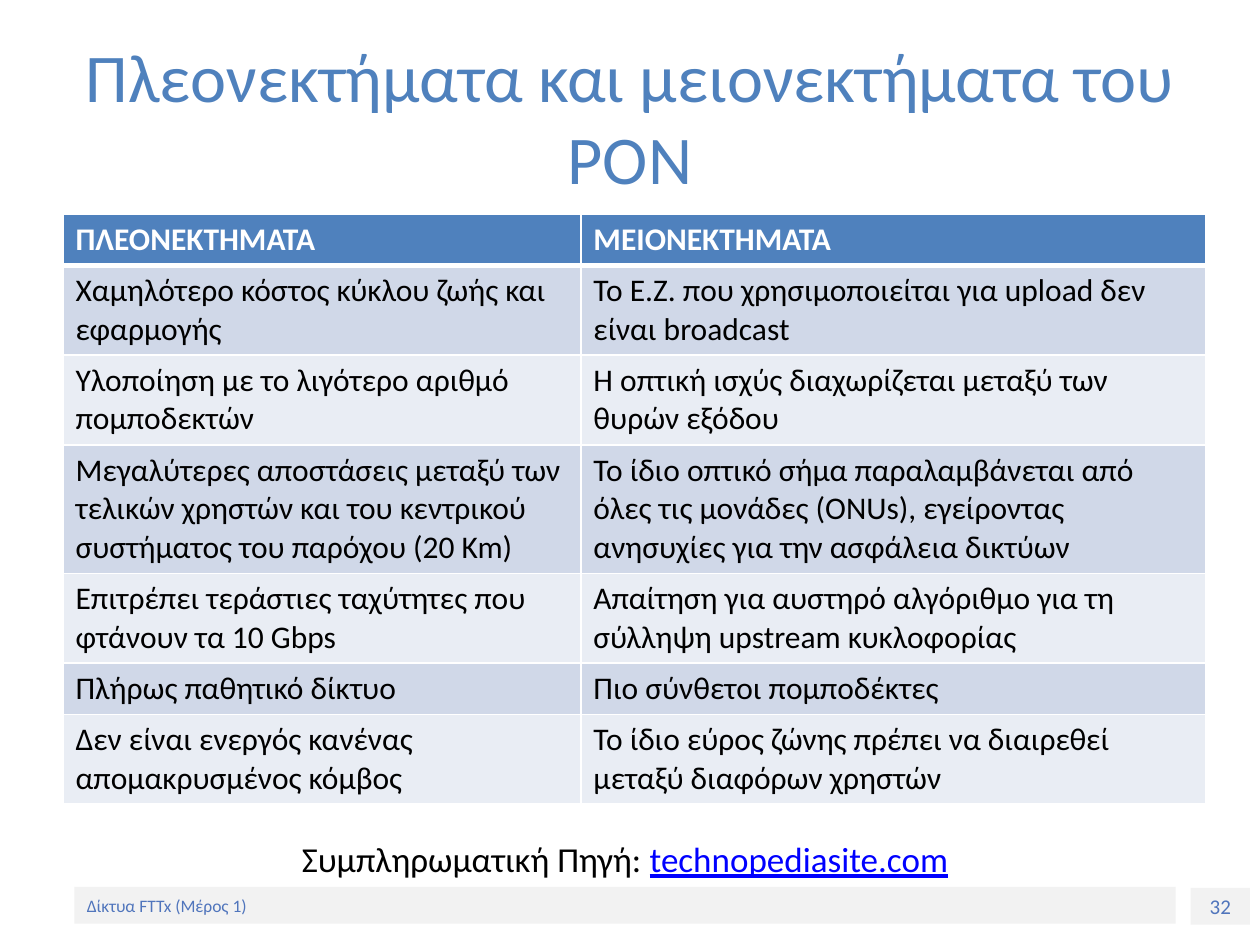
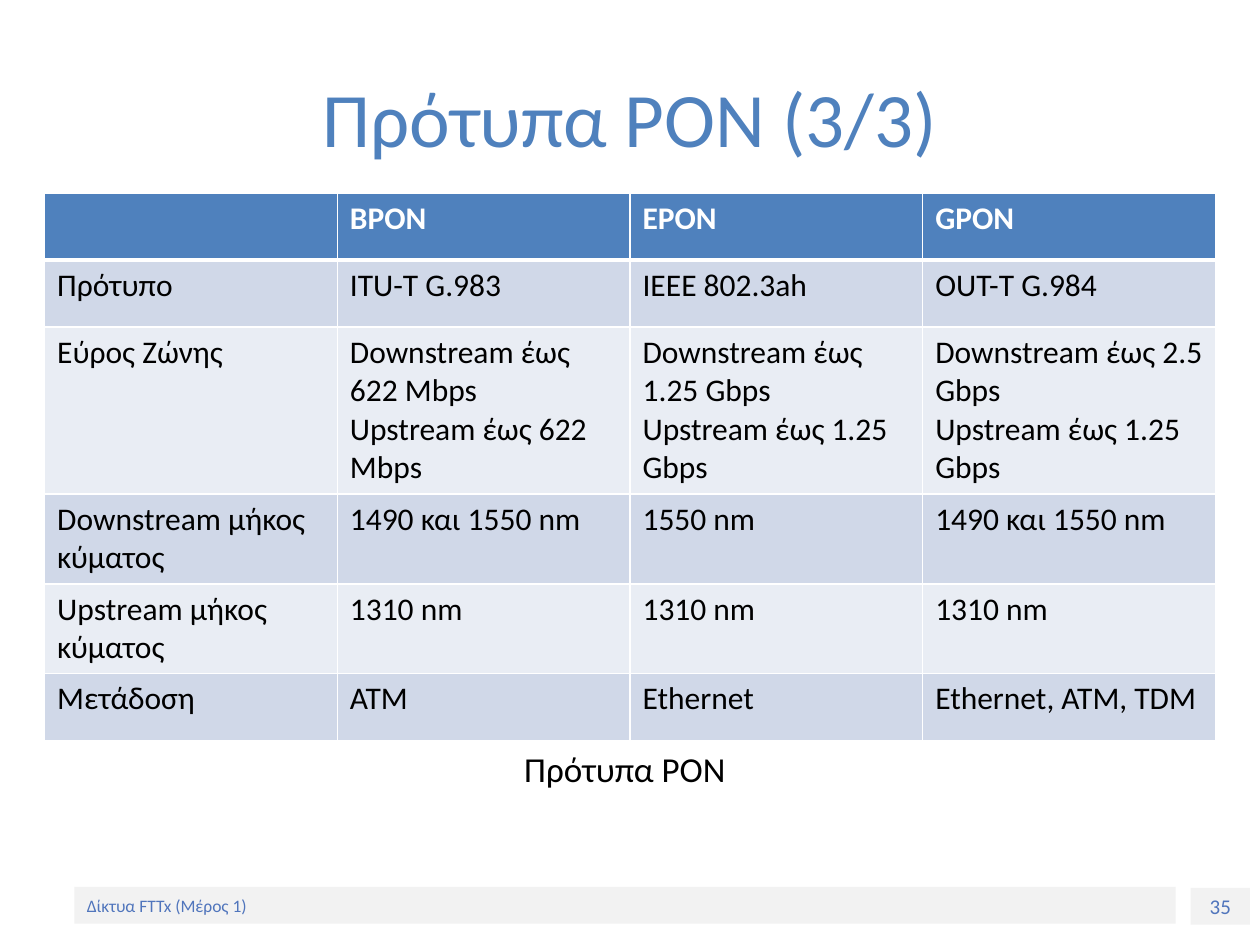
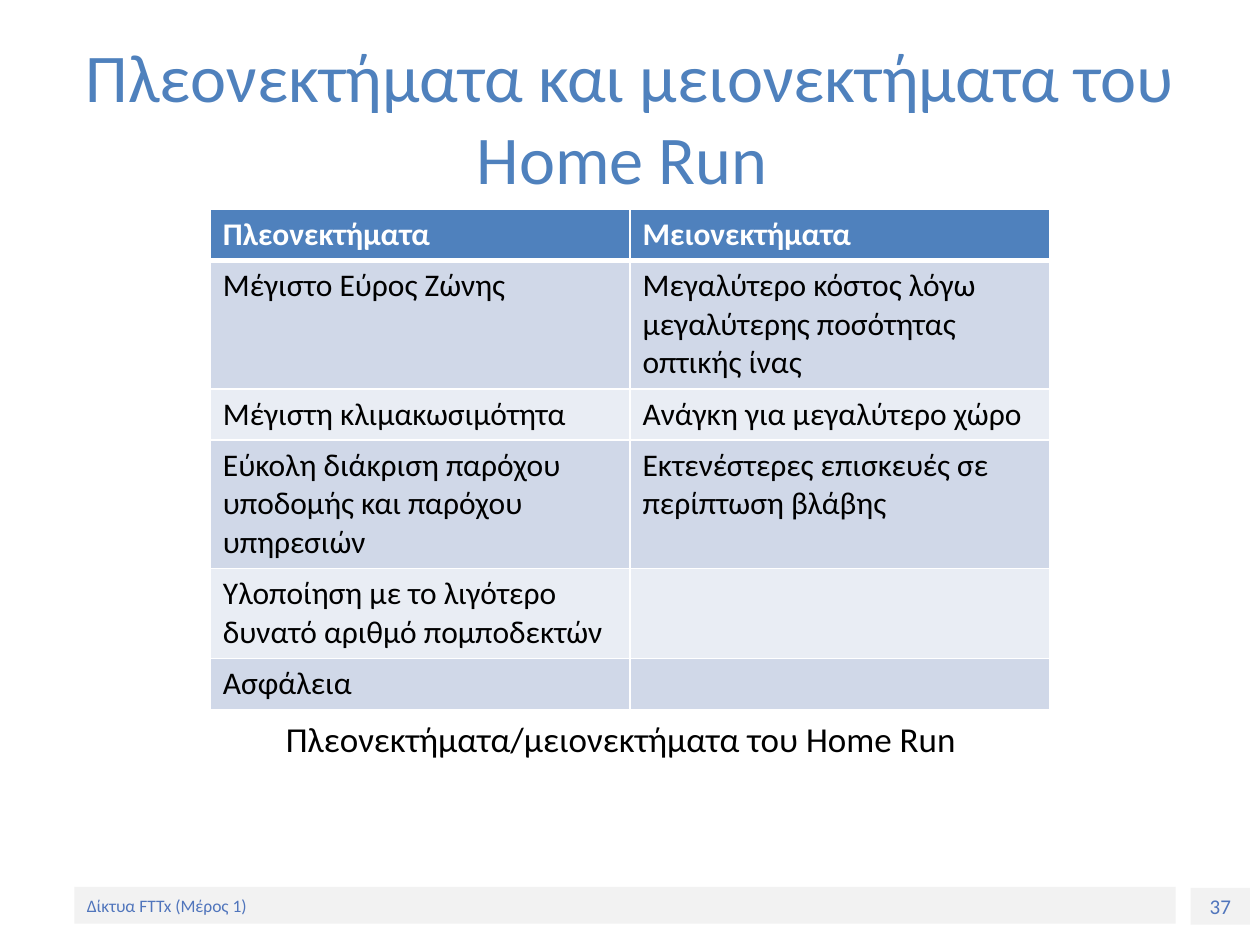
import dataclasses

import lxml.etree
import pptx
import pptx.dml.color
import pptx.enum.shapes
import pptx.enum.text
import pptx.oxml.ns
import pptx.util

Cm = pptx.util.Cm
Pt = pptx.util.Pt
Align = pptx.enum.text.PP_ALIGN
Anchor = pptx.enum.text.MSO_ANCHOR


@dataclasses.dataclass(frozen=True)
class Theme:
    font: str = "Calibri"
    title: str = "4F81BD"
    header: str = "4F81BD"
    header_text: str = "FFFFFF"
    border: str = "FFFFFF"
    bands: tuple = ("D0D8E8", "E9EDF4")
    text: str = "000000"
    link: str = "0000FF"
    footer_fill: str = "F2F2F2"
    footer_text: str = "5075BC"
    caption_size: float = 20
    cell_size: float = 18
    number_size: float = 12
    footer_size: float = 10
    thin_line: float = 1
    thick_line: float = 3


THEME = Theme()
FOOTER = "Δίκτυα FTTx (Μέρος 1)"
FOOTER_BOX = (1.5, 17.88, 22.2, 0.74)
NUMBER_BOX = (24, 17.9, 1.2, 0.74)
TITLE_BOX = (1.27, 0.76, 22.86, 3.18)
CAPTION_LEFT, CAPTION_WIDTH = 4.98, 15.24
LINE_HEIGHT, CELL_PADDING = 0.78, 0.25

SLIDES = [
    {
        "number": "32",
        "title": "Πλεονεκτήματα και μειονεκτήματα του ΡΟΝ",
        "title_size": 39,
        "caption": "Συμπληρωματική Πηγή: ",
        "link": "technopediasite.com",
        "caption_top": 16.76,
        "caption_height": 1.14,
        "table_at": (1.27, 4.32),
        "columns": [10.44, 12.6],
        "row_lines": [1, 2, 2, 3, 2, 1, 2],
        "least_row": 1,
        "rows": [
            ("ΠΛΕΟΝΕΚΤΗΜΑΤΑ", "ΜΕΙΟΝΕΚΤΗΜΑΤΑ"),
            ("Χαμηλότερο κόστος κύκλου ζωής και εφαρμογής",
             "Το Ε.Ζ. που χρησιμοποιείται για upload δεν είναι broadcast"),
            ("Υλοποίηση με το λιγότερο αριθμό πομποδεκτών",
             "Η οπτική ισχύς διαχωρίζεται μεταξύ των θυρών εξόδου"),
            ("Μεγαλύτερες αποστάσεις μεταξύ των τελικών χρηστών και του κεντρικού "
             "συστήματος του παρόχου (20 Km)",
             "Το ίδιο οπτικό σήμα παραλαμβάνεται από όλες τις μονάδες (ONUs), "
             "εγείροντας ανησυχίες για την ασφάλεια δικτύων"),
            ("Επιτρέπει τεράστιες ταχύτητες που φτάνουν τα 10 Gbps",
             "Απαίτηση για αυστηρό αλγόριθμο για τη σύλληψη upstream κυκλοφορίας"),
            ("Πλήρως παθητικό δίκτυο", "Πιο σύνθετοι πομποδέκτες"),
            ("Δεν είναι ενεργός κανένας απομακρυσμένος κόμβος",
             "Το ίδιο εύρος ζώνης πρέπει να διαιρεθεί μεταξύ διαφόρων χρηστών"),
        ],
    },
    {
        "number": "35",
        "title": "Πρότυπα PON (3/3)",
        "title_size": 44,
        "caption": "Πρότυπα PON",
        "link": "",
        "caption_top": 14.94,
        "caption_height": 2.21,
        "table_at": (0.9, 3.89),
        "columns": [5.9] * 4,
        "row_lines": [1, 1, 4, 2, 2, 1],
        "least_row": 1.35,
        "rows": [
            ("", "BPON", "EPON", "GPON"),
            ("Πρότυπο", "ITU-T G.983", "IEEE 802.3ah", "OUT-T G.984"),
            ("Εύρος Ζώνης",
             "Downstream έως 622 Mbps\nUpstream έως 622 Mbps",
             "Downstream έως 1.25 Gbps\nUpstream έως 1.25 Gbps",
             "Downstream έως 2.5 Gbps\nUpstream έως 1.25 Gbps"),
            ("Downstream μήκος κύματος", "1490 και 1550 nm", "1550 nm", "1490 και 1550 nm"),
            ("Upstream μήκος κύματος", "1310 nm", "1310 nm", "1310 nm"),
            ("Μετάδοση", "ATM", "Ethernet", "Ethernet, ATM, TDM"),
        ],
    },
    {
        "number": "37",
        "title": "Πλεονεκτήματα και μειονεκτήματα του Home Run ",
        "title_size": 39,
        "caption": "Πλεονεκτήματα/μειονεκτήματα του Home Run ",
        "link": "",
        "caption_top": 14.33,
        "caption_height": 2.82,
        "table_at": (4.24, 4.22),
        "columns": [8.46] * 2,
        "row_lines": [1, 3, 1, 3, 2, 1],
        "least_row": 1,
        "rows": [
            ("Πλεονεκτήματα", "Μειονεκτήματα"),
            ("Μέγιστο Εύρος Ζώνης",
             "Μεγαλύτερο κόστος λόγω μεγαλύτερης ποσότητας οπτικής ίνας"),
            ("Μέγιστη κλιμακωσιμότητα", "Ανάγκη για μεγαλύτερο χώρο"),
            ("Εύκολη διάκριση παρόχου υποδομής και παρόχου υπηρεσιών",
             "Εκτενέστερες επισκευές σε περίπτωση βλάβης"),
            ("Υλοποίηση με το λιγότερο δυνατό αριθμό πομποδεκτών", ""),
            ("Ασφάλεια", ""),
        ],
    },
]


def rgb(value):
    return pptx.dml.color.RGBColor.from_string(value)


def style(para, size, color, bold=False, align=Align.LEFT):
    para.alignment = align
    para.font.name = THEME.font
    para.font.size = Pt(size)
    para.font.bold = bold
    para.font.color.rgb = rgb(color)


def write(box, text, size, color, align=Align.CENTER, anchor=Anchor.MIDDLE):
    frame = box.text_frame
    frame.word_wrap = True
    frame.vertical_anchor = anchor
    para = frame.paragraphs[0]
    para.add_run().text = text
    style(para, size, color, align=align)
    return para


def add_text(page, place, *args, **options):
    box = page.shapes.add_textbox(*map(Cm, place))
    return write(box, *args, **options)


def add_band(page, place, text, size, align):
    band = page.shapes.add_shape(pptx.enum.shapes.MSO_SHAPE.RECTANGLE, *map(Cm, place))
    band.shadow.inherit = False
    band.fill.solid()
    band.fill.fore_color.rgb = rgb(THEME.footer_fill)
    band.line.fill.background()
    write(band, text, size, THEME.footer_text, align=align)


def add_borders(cell, widths):
    properties = cell._tc.get_or_add_tcPr()
    for side, width in zip("LRTB", widths):
        line = lxml.etree.SubElement(
            properties, pptx.oxml.ns.qn(f"a:ln{side}"), w=str(Pt(width)))
        fill = lxml.etree.SubElement(line, pptx.oxml.ns.qn("a:solidFill"))
        lxml.etree.SubElement(fill, pptx.oxml.ns.qn("a:srgbClr"), val=THEME.border)


def add_table(page, content):
    columns = content["columns"]
    heights = [max(content["least_row"], CELL_PADDING + LINE_HEIGHT * lines)
               for lines in content["row_lines"]]
    place = (*content["table_at"], sum(columns), sum(heights))
    table = page.shapes.add_table(len(heights), len(columns), *map(Cm, place)).table
    for column, width in zip(table.columns, columns):
        column.width = Cm(width)
    for index, (row, height, texts) in enumerate(zip(table.rows, heights, content["rows"])):
        row.height = Cm(height)
        header = index == 0
        fill = THEME.header if header else THEME.bands[(index - 1) % 2]
        color = THEME.header_text if header else THEME.text
        top = THEME.thick_line if index == 1 else THEME.thin_line
        bottom = THEME.thick_line if header else THEME.thin_line
        for cell, text in zip(row.cells, texts):
            add_borders(cell, (THEME.thin_line, THEME.thin_line, top, bottom))
            cell.fill.solid()
            cell.fill.fore_color.rgb = rgb(fill)
            cell.text = text
            for para in cell.text_frame.paragraphs:
                style(para, THEME.cell_size, color, bold=header)


def add_caption(page, content):
    place = (CAPTION_LEFT, content["caption_top"], CAPTION_WIDTH, content["caption_height"])
    para = add_text(page, place, content["caption"], THEME.caption_size, THEME.text,
                    anchor=Anchor.TOP)
    if content["link"]:
        span = para.add_run()
        span.text = content["link"]
        span.font.underline = True
        span.font.color.rgb = rgb(THEME.link)


def main():
    deck = pptx.Presentation()
    deck.slide_width, deck.slide_height = Cm(25.4), Cm(19.05)
    for content in SLIDES:
        page = deck.slides.add_slide(deck.slide_layouts[6])
        add_band(page, NUMBER_BOX, content["number"], THEME.number_size, Align.CENTER)
        add_band(page, FOOTER_BOX, FOOTER, THEME.footer_size, Align.LEFT)
        add_text(page, TITLE_BOX, content["title"], content["title_size"], THEME.title)
        add_caption(page, content)
        add_table(page, content)
    deck.save("out.pptx")


if __name__ == "__main__":
    main()
